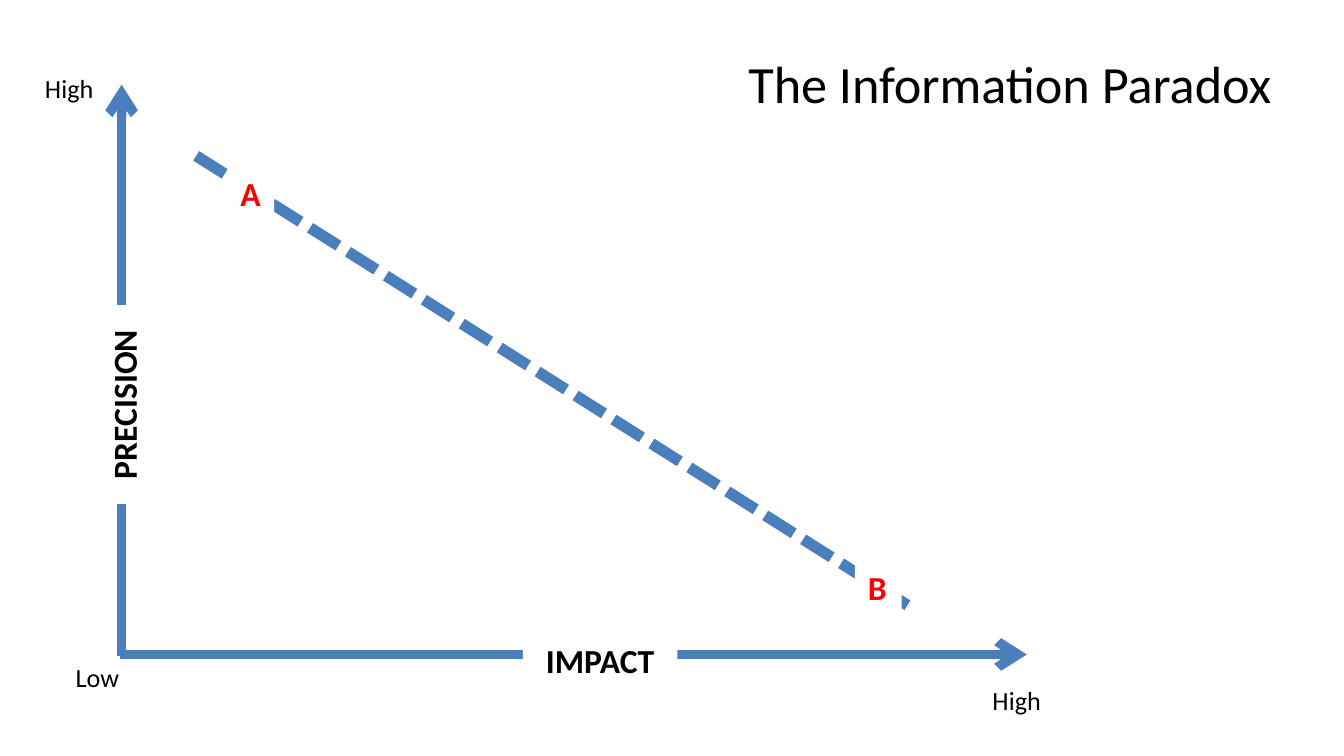
from lxml import etree
from pptx import Presentation
from pptx.dml.color import RGBColor
from pptx.enum.dml import MSO_LINE
from pptx.enum.shapes import MSO_CONNECTOR
from pptx.enum.text import PP_ALIGN
from pptx.oxml.ns import qn
from pptx.util import Pt

EMU_PER_PX = 4572  # 200 px to the inch
STRAIGHT = MSO_CONNECTOR.STRAIGHT
SHORT_DASH = MSO_LINE.SQUARE_DOT  # written to the file as sysDash
LEFT, CENTER = PP_ALIGN.LEFT, PP_ALIGN.CENTER
FONT = "Calibri"
COLORS = {"line": "4B7EBC", "text": "000000", "marker": "FF0000", "paper": "FFFFFF"}


def px(value):
    return value * EMU_PER_PX


def color(name):
    return RGBColor.from_string(COLORS[name])


def add_line(slide, start, end, width):
    line = slide.shapes.add_connector(STRAIGHT, *map(px, start + end))
    line.line.color.rgb = color("line")
    line.line.width = Pt(width)
    etree.SubElement(line._element.spPr, qn("a:effectLst"))
    return line


def add_axis(slide, start, end):
    axis = add_line(slide, start, end, 5)
    etree.SubElement(axis.line._get_or_add_ln(), qn("a:tailEnd"), type="arrow")


def add_trend(slide, start, end):
    trend = add_line(slide, start, end, 6)
    trend.line.dash_style = SHORT_DASH


def add_text(slide, place, text, size, align=CENTER, ink="text", bold=False):
    box = slide.shapes.add_textbox(*map(px, place))
    box.text_frame.word_wrap = True
    para = box.text_frame.paragraphs[0]
    para.alignment = align
    span = para.add_run()
    span.text = text
    span.font.name = FONT
    span.font.size = Pt(size)
    span.font.bold = bold
    span.font.color.rgb = color(ink)
    return box


def add_line_label(slide, place, text, align=CENTER, ink="text"):
    """Add a bold label whose opaque fill interrupts the line beneath it."""
    label = add_text(slide, place, text, 18, align, ink, bold=True)
    label.fill.solid()
    label.fill.fore_color.rgb = color("paper")
    return label


def main():
    deck = Presentation()
    deck.slide_width, deck.slide_height = px(2000), px(1125)
    slide = deck.slides.add_slide(deck.slide_layouts[6])

    add_axis(slide, (181, 976), (181, 126))
    add_axis(slide, (178, 974), (1528, 974))
    precision = add_line_label(slide, (36, 562, 296, 80), "PRECISION")
    precision.rotation = 270
    add_line_label(slide, (778, 943, 230, 80), "IMPACT")

    for left, top, text in ((64, 975, "Low"), (22, 98, "High"), (1432, 1008, "High")):
        add_text(slide, (left, top, 162, 68), text, 14)
    add_text(slide, (1094, 66, 834, 114), "The Information Paradox", 28, LEFT)

    add_trend(slide, (292, 232), (1362, 908))
    for left, top, text in ((338, 248, "A"), (1272, 834, "B")):
        add_line_label(slide, (left, top, 70, 80), text, LEFT, "marker")

    deck.save("out.pptx")


if __name__ == "__main__":
    main()
